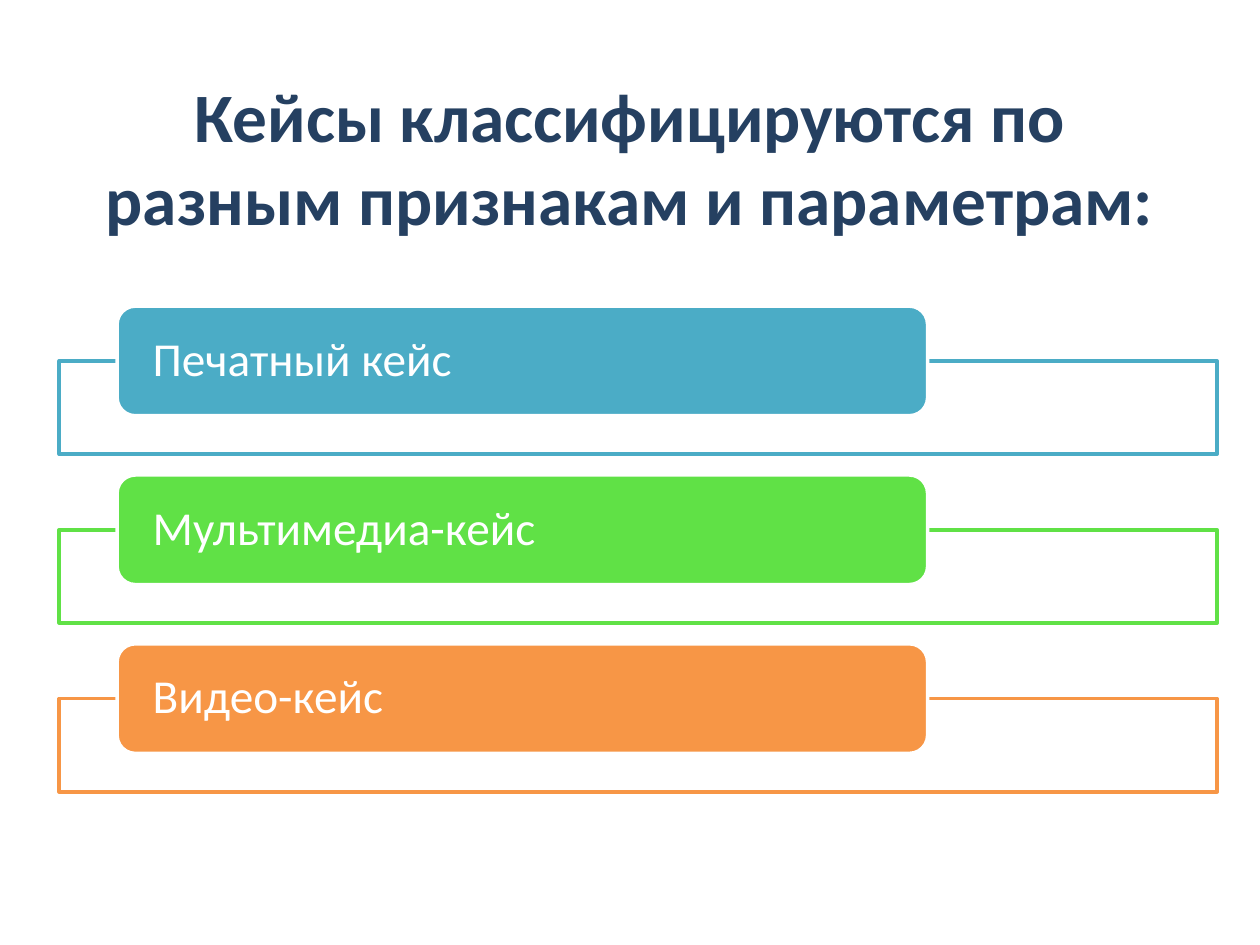
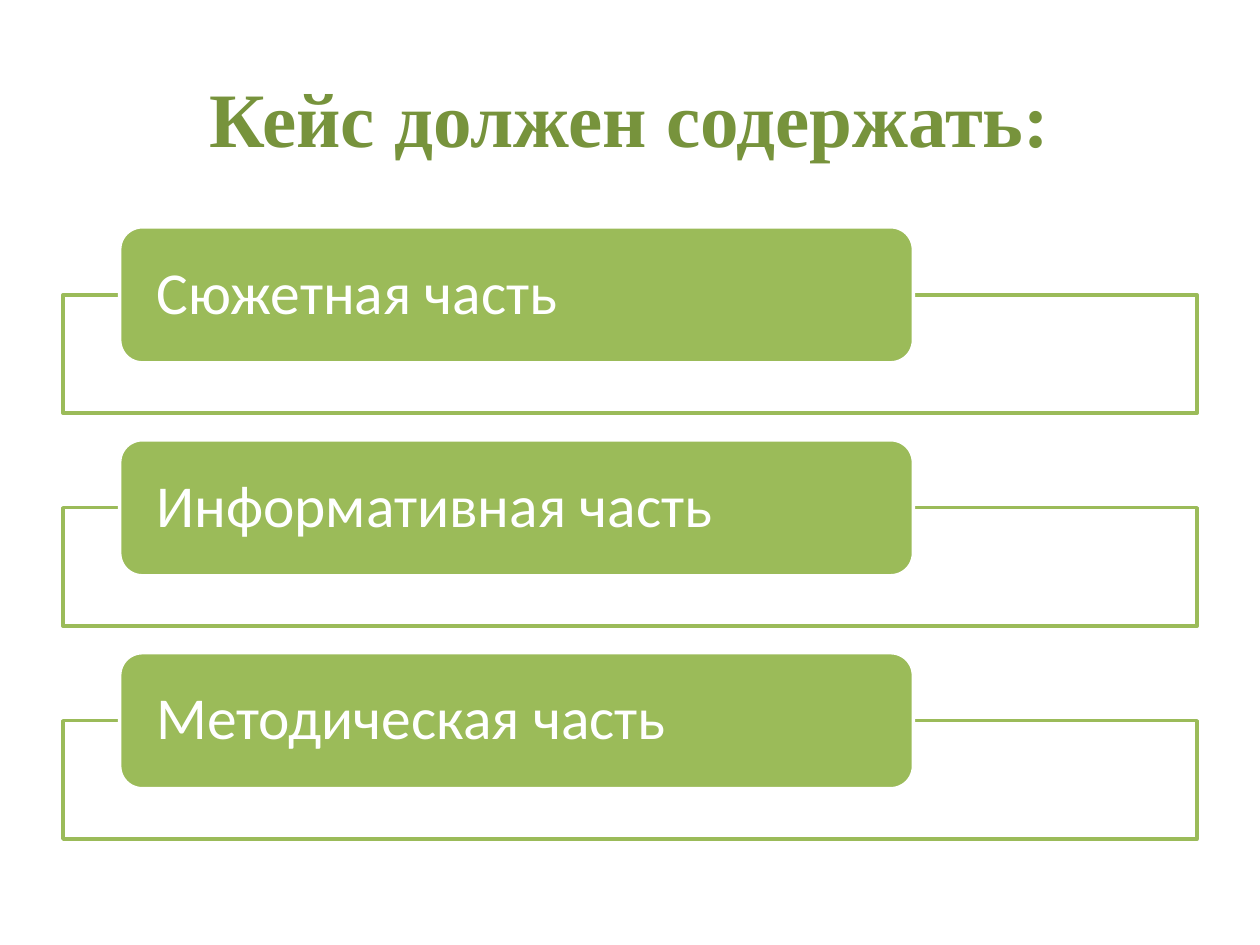
from lxml import etree
from pptx import Presentation
from pptx.dml.color import RGBColor
from pptx.enum.shapes import MSO_SHAPE
from pptx.enum.text import MSO_ANCHOR, PP_ALIGN
from pptx.oxml.ns import qn
from pptx.util import Inches, Pt

WHITE = "FFFFFF"
BODY_FONT = "Calibri"
GREEN = "9BBB59"


def color(hex_value):
    return RGBColor.from_string(hex_value)


def write(frame, text, font, size, hex_value, bold=False, align=PP_ALIGN.LEFT):
    frame.word_wrap = True
    frame.vertical_anchor = MSO_ANCHOR.MIDDLE
    para = frame.paragraphs[0]
    para.alignment = align
    span = para.add_run()
    span.text = text
    span.font.name = font
    span.font.size = Pt(size)
    span.font.bold = bold
    span.font.color.rgb = color(hex_value)
    return para


def add_title(page, box, text, font, size, hex_value):
    title = page.shapes.add_textbox(*map(Inches, box))
    write(title.text_frame, text, font, size, hex_value, True, PP_ALIGN.CENTER)


def add_panel(page, preset, box, fill, line):
    panel = page.shapes.add_shape(preset, *map(Inches, box))
    panel.shadow.inherit = False
    panel.fill.solid()
    panel.fill.fore_color.rgb = color(fill)
    panel.line.color.rgb = color(line)
    panel.line.width = Pt(2)
    return panel


def add_item(page, box, label_box, text, size, accent):
    """Draw an outlined frame with a filled label overlapping its top edge."""
    frame = add_panel(page, MSO_SHAPE.RECTANGLE, box, WHITE, accent)
    fill_color = frame.fill._xPr.find(qn("a:solidFill"))[0]
    etree.SubElement(fill_color, qn("a:alpha"), val="90000")

    label = add_panel(page, MSO_SHAPE.ROUNDED_RECTANGLE, label_box, accent, WHITE)
    text_frame = label.text_frame
    text_frame.margin_left = text_frame.margin_right = Inches(0.24)
    text_frame.margin_top = text_frame.margin_bottom = 0
    para = write(text_frame, text, BODY_FONT, size, WHITE)
    para.line_spacing = 0.9


def add_list(page, box, items, frame_height, label_height, pitch, size):
    """Stack items; box is the left, top and width of the list."""
    left, top, width = box
    for index, (text, accent) in enumerate(items):
        label_top = top + index * pitch
        frame_box = (left, label_top + label_height / 2, width, frame_height)
        label_box = (left + width * 0.05, label_top, width * 0.7, label_height)
        add_item(page, frame_box, label_box, text, size, accent)


def add_page(deck):
    page = deck.slides.add_slide(deck.slide_layouts[6])
    page.background.fill.solid()
    page.background.fill.fore_color.rgb = color(WHITE)
    return page


def build_types_page(deck):
    page = add_page(deck)
    add_title(page, (0.5, 0.42, 9, 1.64),
              "Кейсы классифицируются по разным признакам и параметрам:",
              BODY_FONT, 39.6, "254061")
    items = [("Печатный кейс", "4BACC6"),
             ("Мультимедиа-кейс", "60E146"),
             ("Видео-кейс", "F79646")]
    add_list(page, (0.47, 2.43, 9.19), items, frame_height=0.74,
             label_height=0.87, pitch=1.34, size=27)


def build_parts_page(deck):
    page = add_page(deck)
    add_title(page, (0.5, 0.3, 9, 1.25), "Кейс должен содержать:",
              "Times New Roman", 44, "77933C")
    parts = ["Сюжетная часть", "Информативная часть", "Методическая часть"]
    add_list(page, (0.5, 1.8, 9), [(part, GREEN) for part in parts],
             frame_height=0.94, label_height=1.08, pitch=1.69, size=34)


def main():
    deck = Presentation()
    deck.slide_width, deck.slide_height = Inches(10), Inches(7.5)
    build_types_page(deck)
    build_parts_page(deck)
    deck.save("out.pptx")


if __name__ == "__main__":
    main()
